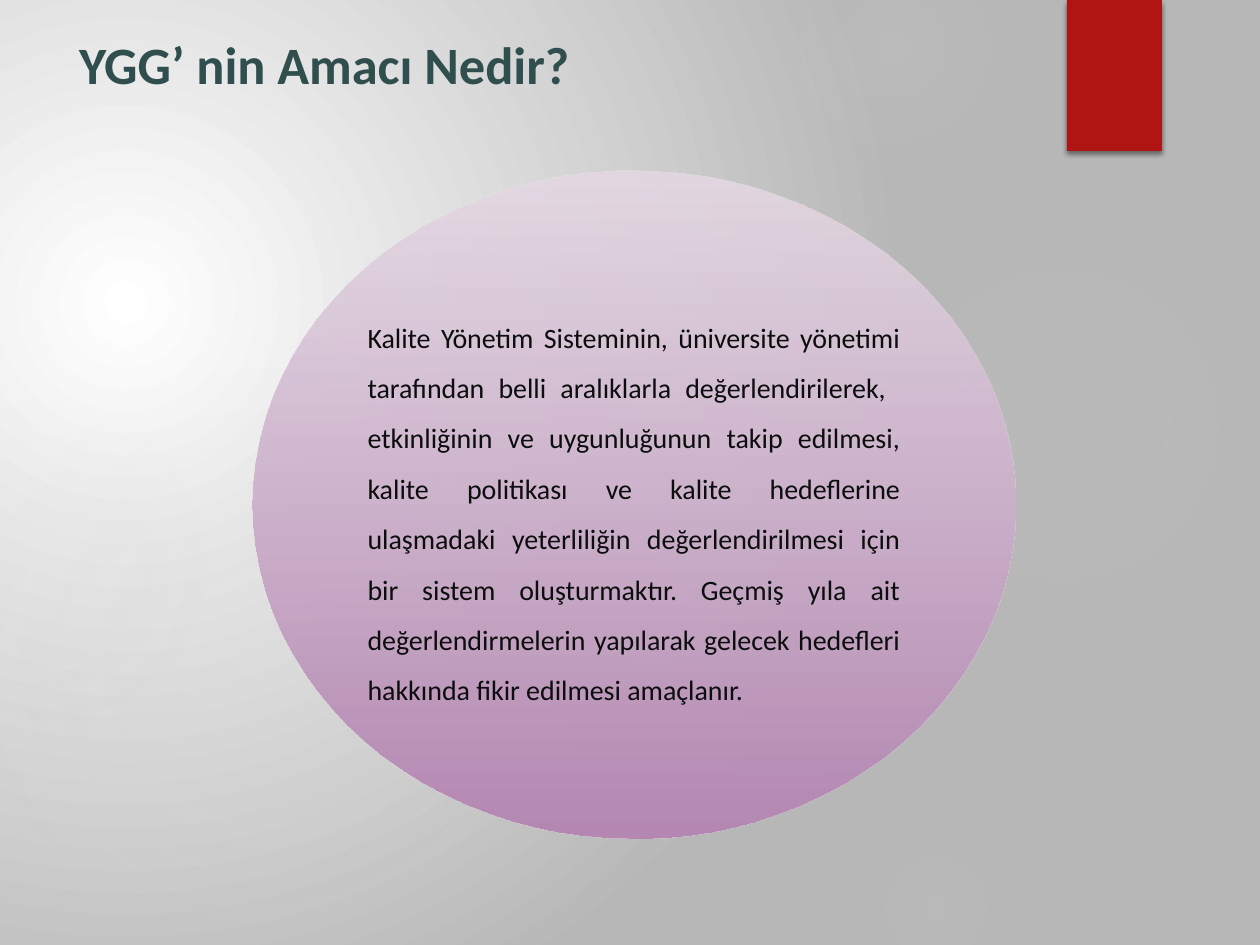
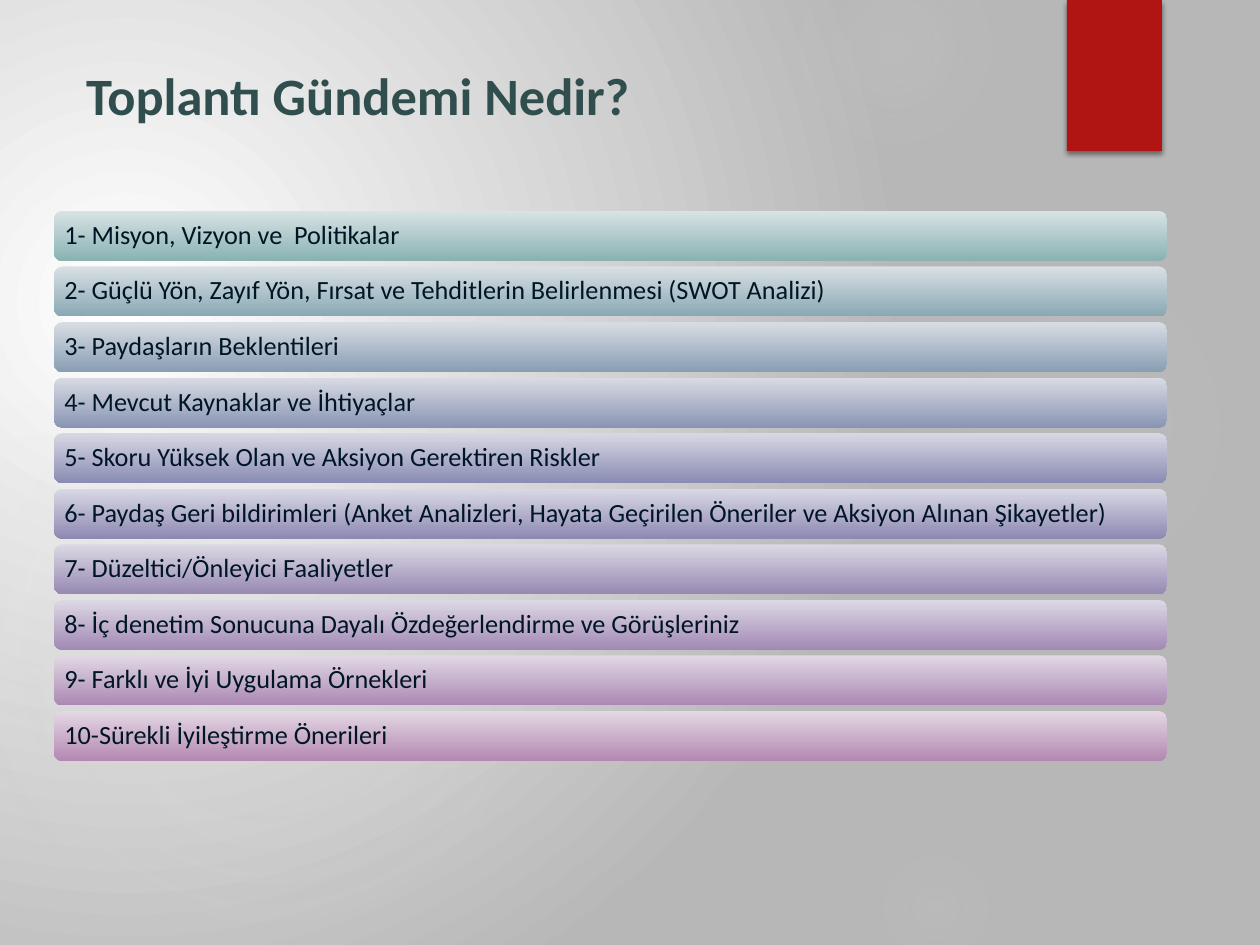
from dataclasses import dataclass

from lxml import etree
from pptx import Presentation
from pptx.dml.color import RGBColor
from pptx.enum.shapes import MSO_SHAPE
from pptx.enum.text import MSO_ANCHOR, MSO_AUTO_SIZE, PP_ALIGN
from pptx.oxml.ns import qn
from pptx.util import Emu, Pt

ELLIPSE, RECT, ROUND_RECT = MSO_SHAPE.OVAL, MSO_SHAPE.RECTANGLE, MSO_SHAPE.ROUNDED_RECTANGLE
LEFT, JUSTIFY = PP_ALIGN.LEFT, PP_ALIGN.JUSTIFY
TOP, MIDDLE = MSO_ANCHOR.TOP, MSO_ANCHOR.MIDDLE
NO_AUTOFIT = MSO_AUTO_SIZE.NONE
TITLE_ONLY = 5
SCALE = 914400 / 126


@dataclass(frozen=True)
class Theme:
    """Colours and type sizes of the deck."""
    font: str = "Calibri"
    title_size: int = 30
    purpose_size: int = 16
    agenda_size: int = 15
    title: str = "304E4E"
    purpose: str = "0C0D0D"
    agenda: str = "001626"
    flag: str = "B01513"
    shadow: str = "000000"
    halo: str = "D9D9D9"
    backdrop: tuple = ("FFFFFF", "B7B7B7")
    plum: tuple = ("E4D8E3", "B488B2")
    bars: tuple = (
        ("D8E3E4", "89B2B3"), ("D8E0E4", "89A8B3"), ("D8DDE4", "899EB3"),
        ("D8DBE4", "8995B3"), ("D8D8E4", "898CB3"), ("D9D8E4", "8E89B3"),
        ("DBD8E4", "9789B3"), ("DED8E4", "A189B4"), ("E1D8E4", "AB88B4"),
        ("E4D8E3", "B488B2"),
    )


THEME = Theme()

HALOS = (
    ((868, 231, 388, 388), (7, 6), 69),
    ((784, -63, 220, 220), (14, 7), 73),
    ((868, 840, 136, 136), (9, 5), 66),
    ((-21, 368, 577, 577), (11, 10), 75),
    ((-116, 399, 325, 325), (8, 8), 72),
)

PURPOSE = (
    "Kalite Yönetim Sisteminin, üniversite yönetimi tarafından belli aralıklarla "
    "değerlendirilerek,  etkinliğinin ve uygunluğunun takip edilmesi, kalite politikası "
    "ve kalite hedeflerine ulaşmadaki yeterliliğin değerlendirilmesi için bir sistem "
    "oluşturmaktır. Geçmiş yıla ait değerlendirmelerin yapılarak gelecek hedefleri "
    "hakkında fikir edilmesi amaçlanır."
)

AGENDA = (
    "1- Misyon, Vizyon ve  Politikalar",
    "2- Güçlü Yön, Zayıf Yön, Fırsat ve Tehditlerin Belirlenmesi (SWOT Analizi)",
    "3- Paydaşların Beklentileri",
    "4- Mevcut Kaynaklar ve İhtiyaçlar",
    "5- Skoru Yüksek Olan ve Aksiyon Gerektiren Riskler",
    "6- Paydaş Geri bildirimleri (Anket Analizleri, Hayata Geçirilen Öneriler ve "
    "Aksiyon Alınan Şikayetler)",
    "7- Düzeltici/Önleyici Faaliyetler",
    "8- İç denetim Sonucuna Dayalı Özdeğerlendirme ve Görüşleriniz",
    "9- Farklı ve İyi Uygulama Örnekleri",
    "10-Sürekli İyileştirme Önerileri",
)


def px(n):
    """Turn pixels into EMU."""
    return Emu(round(n * SCALE))


def add_xml(parent, tag, **attrs):
    """Append a DrawingML element and return it."""
    return etree.SubElement(parent, qn(tag), {k: str(v) for k, v in attrs.items()})


def add_colour(parent, colour, alpha=100):
    """Append a colour with its opacity in percent."""
    clr = add_xml(parent, "a:srgbClr", val=colour)
    if alpha < 100:
        add_xml(clr, "a:alpha", val=alpha * 1000)


def set_gradient(fill, element, stops, focus=None):
    """Fill with (position, colour, alpha) stops, downward or circular around focus."""
    fill.gradient()
    grad = next(element.iter(qn("a:gradFill")))
    for child in list(grad):
        grad.remove(child)
    gs_lst = add_xml(grad, "a:gsLst")
    for pos, colour, alpha in stops:
        add_colour(add_xml(gs_lst, "a:gs", pos=pos * 1000), colour, alpha)
    if focus:
        circle = add_xml(grad, "a:path", path="circle")
        add_xml(circle, "a:fillToRect", **{k: v * 1000 for k, v in zip("ltrb", focus)})
    else:
        add_xml(grad, "a:lin", ang=5400000, scaled=0)


def add_plain(slide, kind, box):
    """Add a preset shape without line or shadow."""
    sp = slide.shapes.add_shape(kind, *map(px, box))
    sp.line.fill.background()
    sp.shadow.inherit = False
    return sp


def write(sp, text, size, colour, align=LEFT, anchor=MIDDLE, inset=3, spacing=0.9, bold=False):
    """Write one formatted paragraph into a shape."""
    tf = sp.text_frame
    tf.word_wrap = True
    tf.auto_size = NO_AUTOFIT
    tf.vertical_anchor = anchor
    tf.margin_left = tf.margin_right = tf.margin_top = tf.margin_bottom = px(inset)
    p = tf.paragraphs[0]
    p.alignment = align
    p.line_spacing = spacing
    r = p.add_run()
    r.text = text
    r.font.name = THEME.font
    r.font.size = Pt(size)
    r.font.bold = bold
    r.font.color.rgb = RGBColor.from_string(colour)


def add_halo(slide, box, alphas, end):
    """Add a soft circle that fades out at the end position."""
    sp = add_plain(slide, ELLIPSE, box)
    stops = [(pos, THEME.halo, a) for pos, a in zip((0, 36, end), (*alphas, 0))]
    set_gradient(sp.fill, sp._element, stops, (50, 50, 50, 50))
    return sp


def add_flag(slide, box):
    """Add the red flag with its drop shadow."""
    sp = add_plain(slide, RECT, box)
    sp.fill.solid()
    sp.fill.fore_color.rgb = RGBColor.from_string(THEME.flag)
    effects = sp._element.spPr.find(qn("a:effectLst"))
    shadow = add_xml(effects, "a:outerShdw", blurRad=Pt(3), dist=Pt(2), dir=5400000,
                     algn="ctr", rotWithShape=0)
    add_colour(shadow, THEME.shadow, 45)
    return sp


def dress_master(prs, slide):
    """Move the backdrop, halos and flag onto the slide master."""
    master = prs.slide_master
    first, last = THEME.backdrop
    set_gradient(master.background.fill, master._element,
                 [(0, first, 100), (100, last, 100)], (45, 65, 125, 100))
    decor = [add_halo(slide, *halo) for halo in HALOS]
    decor.append(add_flag(slide, (1067, 0, 95, 151)))
    for i, sp in enumerate(decor):
        sp._element.nvSpPr.cNvPr.set("id", str(101 + i))
        master.shapes._spTree.insert(2 + i, sp._element)


def add_title(slide, text, box):
    """Place and fill the title placeholder."""
    sp = slide.shapes.title
    sp.left, sp.top, sp.width, sp.height = map(px, box)
    write(sp, text, THEME.title_size, THEME.title, anchor=TOP, inset=12, spacing=1.0, bold=True)
    sp.text_frame.margin_top = sp.text_frame.margin_bottom = px(6)


def add_purpose(slide, box):
    """Add the ellipse that states the purpose."""
    sp = add_plain(slide, ELLIPSE, box)
    light, dark = THEME.plum
    set_gradient(sp.fill, sp._element, [(0, light, 90), (100, dark, 100)])
    write(sp, PURPOSE, THEME.purpose_size, THEME.purpose, JUSTIFY, spacing=1.5)


def add_agenda(slide, box, bar_height=50):
    """Spread the agenda bars evenly over the box."""
    x, y, w, h = box
    step = (h - bar_height) / (len(AGENDA) - 1)
    for i, (text, (light, dark)) in enumerate(zip(AGENDA, THEME.bars)):
        sp = add_plain(slide, ROUND_RECT, (x, y + i * step, w, bar_height))
        set_gradient(sp.fill, sp._element, [(0, light, 100), (100, dark, 100)])
        write(sp, text, THEME.agenda_size, THEME.agenda, inset=8)


def main():
    """Build and save the deck."""
    prs = Presentation()
    prs.slide_width, prs.slide_height = px(1260), px(945)
    layout = prs.slide_layouts[TITLE_ONLY]

    purpose = prs.slides.add_slide(layout)
    dress_master(prs, purpose)
    add_title(purpose, "YGG’ nin Amacı Nedir?", (67, 26, 665, 74))
    add_purpose(purpose, (253, 171, 762, 668))

    agenda = prs.slides.add_slide(layout)
    add_title(agenda, "Toplantı Gündemi Nedir?", (74, 57, 665, 74))
    add_agenda(agenda, (54, 211, 1113, 550))

    prs.save("out.pptx")


if __name__ == "__main__":
    main()
